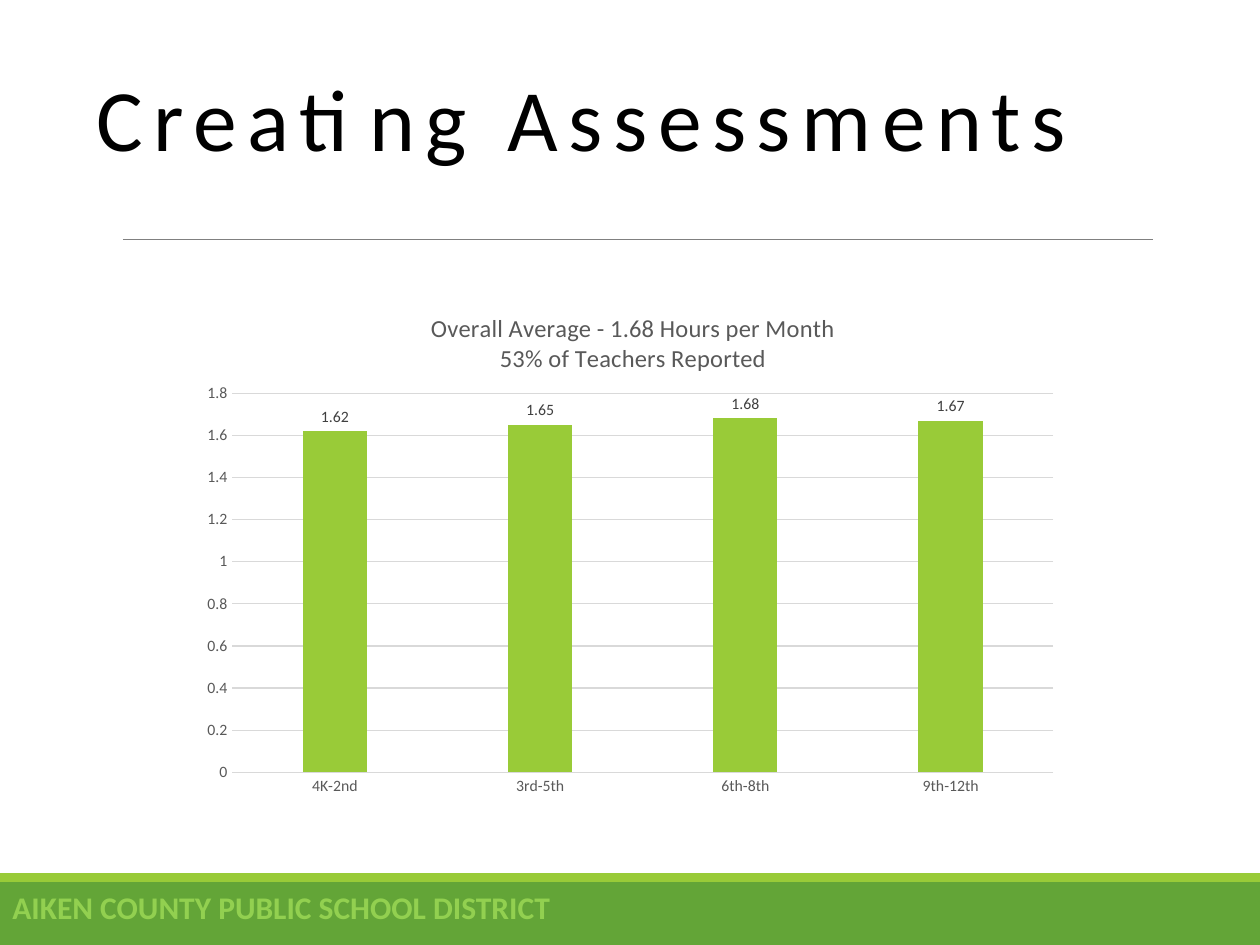
from lxml import etree
from pptx import Presentation
from pptx import util as u
from pptx.chart.data import CategoryChartData
from pptx.dml.color import RGBColor
from pptx.enum import chart as charts, shapes, text
from pptx.oxml.ns import qn


def color(value):
    return RGBColor.from_string(value)


def px(value):
    return u.Emu(round(value * 914400 / 126))


def box(*lengths):
    return [px(length) for length in lengths]


def place(parent, index, **fractions):
    layout = parent.find(qn("c:layout"))
    if layout is None:
        layout = etree.Element(qn("c:layout"))
        parent.insert(index, layout)
    manual = etree.SubElement(layout, qn("c:manualLayout"))
    for tag, value in fractions.items():
        etree.SubElement(manual, qn(f"c:{tag}")).set("val", str(value))


class AssessmentSlide:
    """Draws the elements of one slide in a shared green style."""

    face = "Calibri"
    dark_green, light_green, footer_green = "63A537", "99CB38", "92D050"
    gray, label_gray, grid_gray, rule_gray = "595959", "404040", "D9D9D9", "808080"

    def __init__(self, deck):
        self.slide = deck.slides.add_slide(deck.slide_layouts[5])

    def style(self, font, size, ink, bold=False):
        font.name, font.size, font.bold = self.face, u.Pt(size), bold
        font.color.rgb = color(ink)

    def title(self, wording, *lengths):
        heading = self.slide.shapes.title
        heading.left, heading.top, heading.width, heading.height = box(*lengths)
        frame = heading.text_frame
        frame.text = wording
        frame.word_wrap = True
        frame.auto_size = text.MSO_AUTO_SIZE.NONE
        frame.vertical_anchor = text.MSO_ANCHOR.TOP
        frame.margin_top = px(38)
        line = frame.paragraphs[0]
        line.alignment = text.PP_ALIGN.LEFT
        line.line_spacing = 0.85
        self.style(line.font, 50, "000000")
        line.runs[0]._r.get_or_add_rPr().set("spc", "600")

    def band(self, fill, *lengths):
        band = self.slide.shapes.add_shape(shapes.MSO_SHAPE.RECTANGLE, *box(*lengths))
        band.shadow.inherit = False
        band.fill.solid()
        band.fill.fore_color.rgb = color(fill)
        band.line.fill.background()

    def rule(self, *ends):
        rule = self.slide.shapes.add_connector(shapes.MSO_CONNECTOR.STRAIGHT, *box(*ends))
        rule.line.color.rgb = color(self.rule_gray)
        rule.line.width = u.Pt(0.5)
        etree.SubElement(rule._element.spPr, qn("a:effectLst"))

    def footer(self, wording, *lengths):
        frame = self.slide.shapes.add_textbox(*box(*lengths)).text_frame
        frame.word_wrap = True
        frame.text = wording
        self.style(frame.paragraphs[0].font, 18, self.footer_green, bold=True)

    def columns(self, headings, hours, *lengths):
        data = CategoryChartData()
        data.categories = list(hours)
        data.add_series("Series 1", list(hours.values()))
        chart = self.slide.shapes.add_chart(
            charts.XL_CHART_TYPE.COLUMN_CLUSTERED, *box(*lengths), data).chart
        self.style(chart.font, 10, "000000")
        chart.has_legend = False
        chart.has_title = True
        frame = chart.chart_title.text_frame
        frame.text = "\n".join(headings)
        for line in frame.paragraphs:
            self.style(line.font, 14, self.gray)
        place(chart.chart_title._element, 1, xMode="edge", yMode="edge", x=0.27, y=0.045)
        place(chart._chartSpace.chart.plotArea, 0, layoutTarget="inner", xMode="edge",
              yMode="edge", x=0.049, y=0.209, w=0.931, h=0.725)
        for axis in (chart.category_axis, chart.value_axis):
            axis.major_tick_mark = axis.minor_tick_mark = charts.XL_TICK_MARK.NONE
            self.style(axis.tick_labels.font, 9, self.gray)
        self.hairline(chart.category_axis.format.line)
        levels = chart.value_axis
        levels.minimum_scale, levels.maximum_scale, levels.major_unit = 0, 1.8, 0.2
        levels.format.line.fill.background()
        self.hairline(levels.major_gridlines.format.line)
        plot = chart.plots[0]
        plot.gap_width, plot.overlap, plot.vary_by_categories = 219, -27, False
        bars = plot.series[0].format.fill
        bars.solid()
        bars.fore_color.rgb = color(self.light_green)
        plot.has_data_labels = True
        labels = plot.data_labels
        labels.show_value = True
        labels.position = charts.XL_LABEL_POSITION.OUTSIDE_END
        self.style(labels.font, 9, self.label_gray)

    def hairline(self, line):
        line.color.rgb = color(self.grid_gray)
        line.width = u.Pt(0.75)


def main():
    deck = Presentation()
    deck.slide_width, deck.slide_height = box(1260, 945)
    page = AssessmentSlide(deck)
    page.band(page.dark_green, 0, 882, 1260, 63)
    page.band(page.light_green, 0, 873, 1260, 9)
    page.rule(123, 239, 1153, 239)
    page.title("Creating Assessments", 84, 42, 1176, 265)
    page.footer("AIKEN COUNTY PUBLIC SCHOOL DISTRICT", 0, 882, 1260, 50)
    page.columns(
        ["Overall Average - 1.68 Hours per Month", "53% of Teachers Reported"],
        {"4K-2nd": 1.62, "3rd-5th": 1.65, "6th-8th": 1.68, "9th-12th": 1.67},
        189, 284, 882, 523)
    deck.save("out.pptx")


if __name__ == "__main__":
    main()
